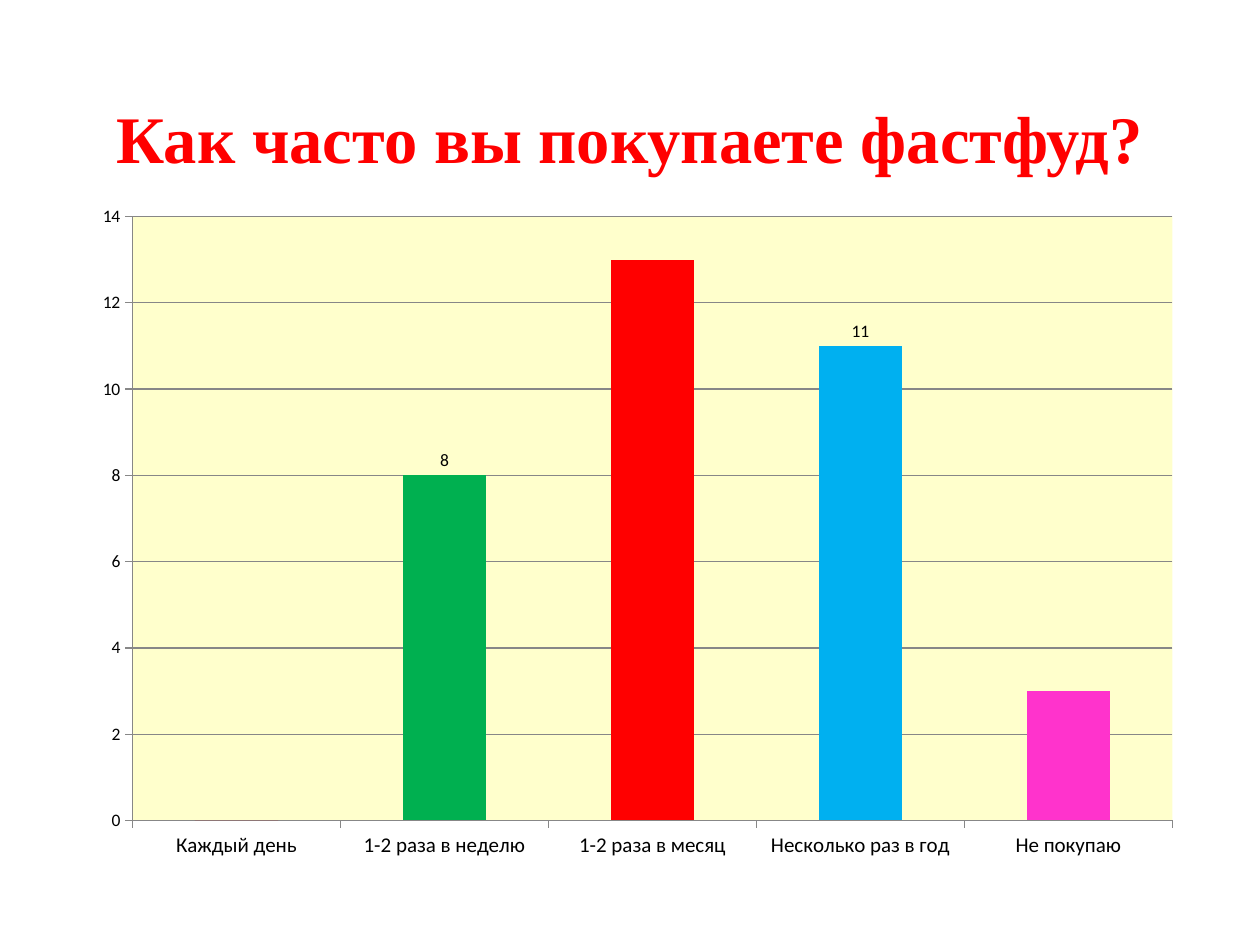
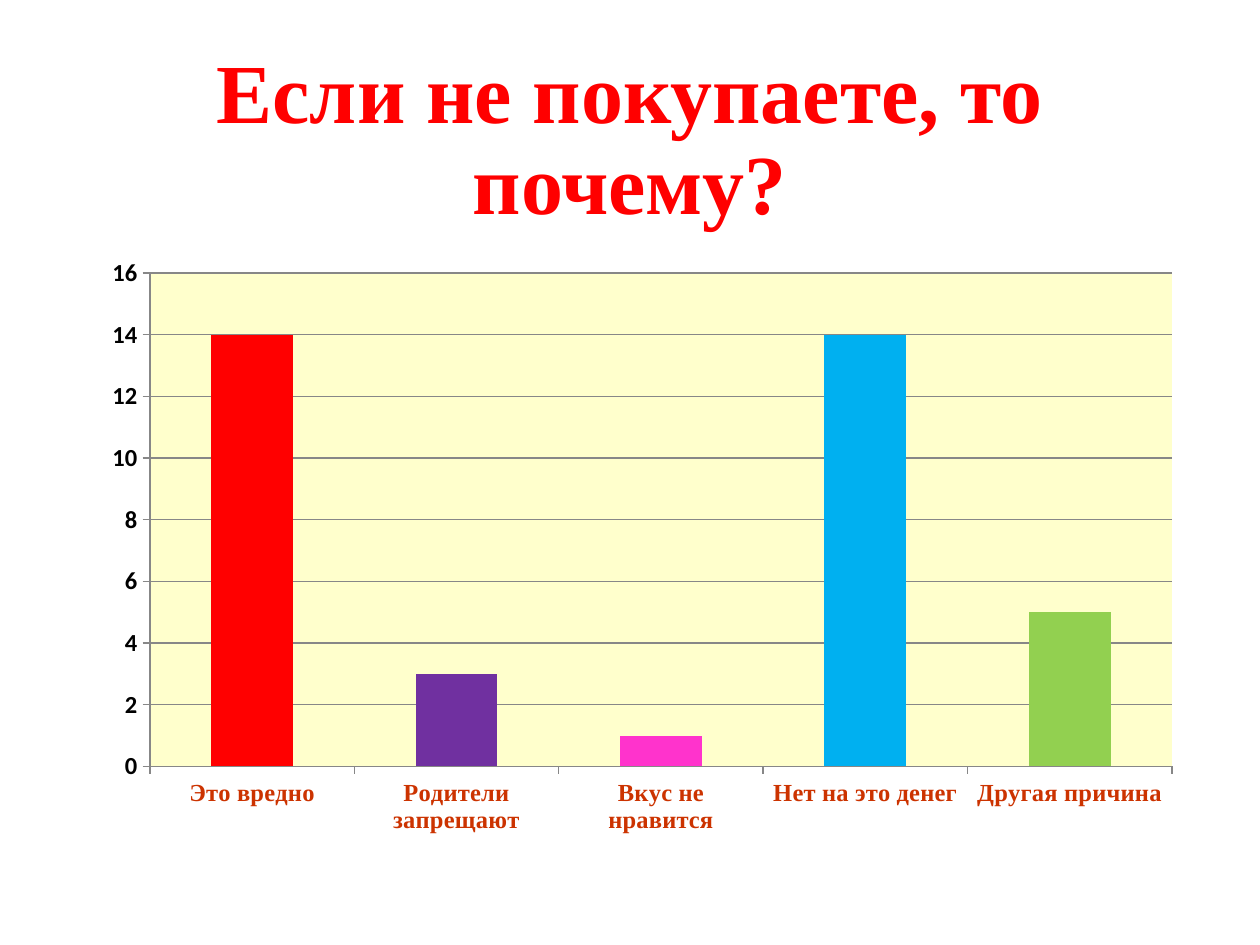
from dataclasses import dataclass

from lxml import etree
from pptx import Presentation
from pptx.chart.axis import _BaseAxis
from pptx.chart.chart import Chart
from pptx.chart.data import CategoryChartData
from pptx.dml.color import RGBColor
from pptx.enum.chart import XL_CHART_TYPE, XL_LABEL_POSITION, XL_TICK_MARK
from pptx.enum.text import MSO_ANCHOR, PP_ALIGN
from pptx.oxml import parse_xml
from pptx.oxml.ns import nsdecls, qn
from pptx.slide import Slide
from pptx.util import Inches, Pt

COLUMNS = XL_CHART_TYPE.COLUMN_CLUSTERED
ABOVE_BAR = XL_LABEL_POSITION.OUTSIDE_END
TICK_OUT = XL_TICK_MARK.OUTSIDE
TICK_NONE = XL_TICK_MARK.NONE
MIDDLE = MSO_ANCHOR.MIDDLE
CENTER = PP_ALIGN.CENTER

COLORS = {
    "black": "000000",
    "axis": "878787",
    "plot": "FFFFCC",
    "red": "FF0000",
    "dark red": "C00000",
    "rust": "CC3300",
    "green": "00B050",
    "light green": "92D050",
    "blue": "00B0F0",
    "pink": "FF33CC",
    "purple": "7030A0",
}
TITLE_FONT = "Times New Roman"
CHART_FONT = "Calibri"
LEFT, WIDTH = Inches(0.69), Inches(8.62)
TITLE_TOP, TITLE_HEIGHT = Inches(0.4), Inches(1.45)
AXIS_STEP = 2


@dataclass(frozen=True)
class Answer:
    label: str
    votes: int
    color: str
    show_votes: bool = False


@dataclass(frozen=True)
class AxisText:
    size: int
    bold: bool = False
    font: str = CHART_FONT
    color: str = "black"


@dataclass(frozen=True)
class Question:
    title: str
    title_size: int
    chart_top: float
    chart_height: float
    plot_area: tuple[float, float, float, float]
    axis_maximum: int
    category_text: AxisText
    value_text: AxisText
    answers: tuple[Answer, ...]


QUESTIONS = (
    Question(
        "Как часто вы покупаете фастфуд?", 38, 1.62, 5.51,
        (0.042, 0.018, 0.958, 0.87), 14, AxisText(12), AxisText(10),
        (
            Answer("Каждый день", 0, "dark red"),
            Answer("1-2 раза в неделю", 8, "green", True),
            Answer("1-2 раза в месяц", 13, "red"),
            Answer("Несколько раз в год", 11, "blue", True),
            Answer("Не покупаю", 3, "pink"),
        ),
    ),
    Question(
        "Если не покупаете, то почему?", 48, 2, 4.76,
        (0.058, 0.035, 0.941, 0.823), 16,
        AxisText(14, True, TITLE_FONT, "rust"), AxisText(14, True),
        (
            Answer("Это вредно", 14, "red"),
            Answer("Родители запрещают", 3, "purple"),
            Answer("Вкус не нравится", 1, "pink"),
            Answer("Нет на это денег", 14, "blue"),
            Answer("Другая причина", 5, "light green"),
        ),
    ),
)


def rgb(name: str) -> RGBColor:
    return RGBColor.from_string(COLORS[name])


def add_title(page: Slide, question: Question) -> None:
    box = page.shapes.add_textbox(LEFT, TITLE_TOP, WIDTH, TITLE_HEIGHT)
    frame = box.text_frame
    frame.word_wrap = True
    frame.vertical_anchor = MIDDLE
    para = frame.paragraphs[0]
    para.text = question.title
    para.alignment = CENTER
    para.line_spacing = 0.9
    para.font.name = TITLE_FONT
    para.font.size = Pt(question.title_size)
    para.font.bold = True
    para.font.color.rgb = rgb("red")


def style_axis(axis: _BaseAxis, text: AxisText) -> None:
    axis.major_tick_mark = TICK_OUT
    axis.minor_tick_mark = TICK_NONE
    axis.format.line.color.rgb = rgb("axis")
    axis.format.line.width = Pt(0.75)
    font = axis.tick_labels.font
    font.name = text.font
    font.size = Pt(text.size)
    font.bold = text.bold
    font.color.rgb = rgb(text.color)


def style_plot_area(chart: Chart, area: tuple[float, float, float, float]) -> None:
    plot_area = chart.element.xpath("c:chart/c:plotArea")[0]
    for old_layout in plot_area.findall(qn("c:layout")):
        plot_area.remove(old_layout)
    layout = parse_xml(f"<c:layout {nsdecls('c')}><c:manualLayout/></c:layout>")
    settings = [("layoutTarget", "inner"), ("xMode", "edge"), ("yMode", "edge")]
    settings += zip("xywh", area)
    for tag, value in settings:
        etree.SubElement(layout[0], qn(f"c:{tag}")).set("val", str(value))
    plot_area.insert(0, layout)
    plot_area.append(parse_xml(
        f"<c:spPr {nsdecls('c', 'a')}><a:solidFill>"
        f"<a:srgbClr val=\"{COLORS['plot']}\"/></a:solidFill></c:spPr>"
    ))


def add_answer_chart(page: Slide, question: Question) -> None:
    data = CategoryChartData()
    data.categories = [answer.label for answer in question.answers]
    data.add_series("Series 1", [answer.votes for answer in question.answers])
    chart = page.shapes.add_chart(
        COLUMNS, LEFT, Inches(question.chart_top),
        WIDTH, Inches(question.chart_height), data,
    ).chart
    chart.has_title = False
    chart.has_legend = False
    chart.font.name = CHART_FONT
    chart.font.size = Pt(10)
    chart.font.color.rgb = rgb("black")

    style_axis(chart.category_axis, question.category_text)
    values = chart.value_axis
    style_axis(values, question.value_text)
    values.minimum_scale = 0
    values.maximum_scale = question.axis_maximum
    values.major_unit = AXIS_STEP
    values.has_major_gridlines = True
    values.major_gridlines.format.line.color.rgb = rgb("axis")
    values.major_gridlines.format.line.width = Pt(0.75)

    plot = chart.plots[0]
    plot.gap_width = 150
    plot.vary_by_categories = False
    series = plot.series[0]
    series.invert_if_negative = False
    series.data_labels.show_value = False
    for index, answer in enumerate(question.answers):
        point = series.points[index]
        point.format.fill.solid()
        point.format.fill.fore_color.rgb = rgb(answer.color)
        if answer.show_votes:
            point.data_label.position = ABOVE_BAR
    style_plot_area(chart, question.plot_area)


def main() -> None:
    deck = Presentation()
    deck.slide_width, deck.slide_height = Inches(10), Inches(7.5)
    blank = deck.slide_layouts[6]
    for question in QUESTIONS:
        page = deck.slides.add_slide(blank)
        add_title(page, question)
        add_answer_chart(page, question)
    deck.save("out.pptx")


if __name__ == "__main__":
    main()
